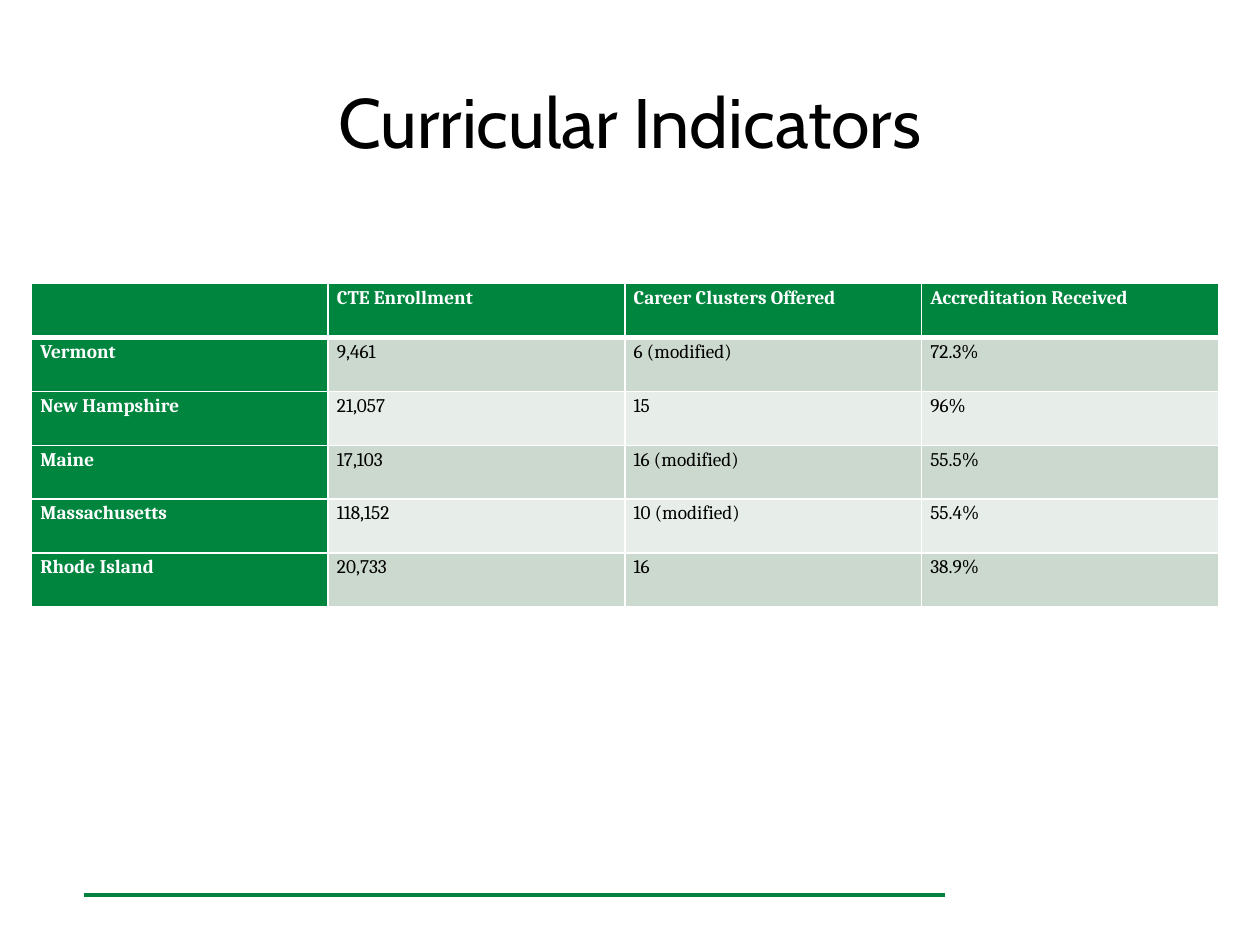
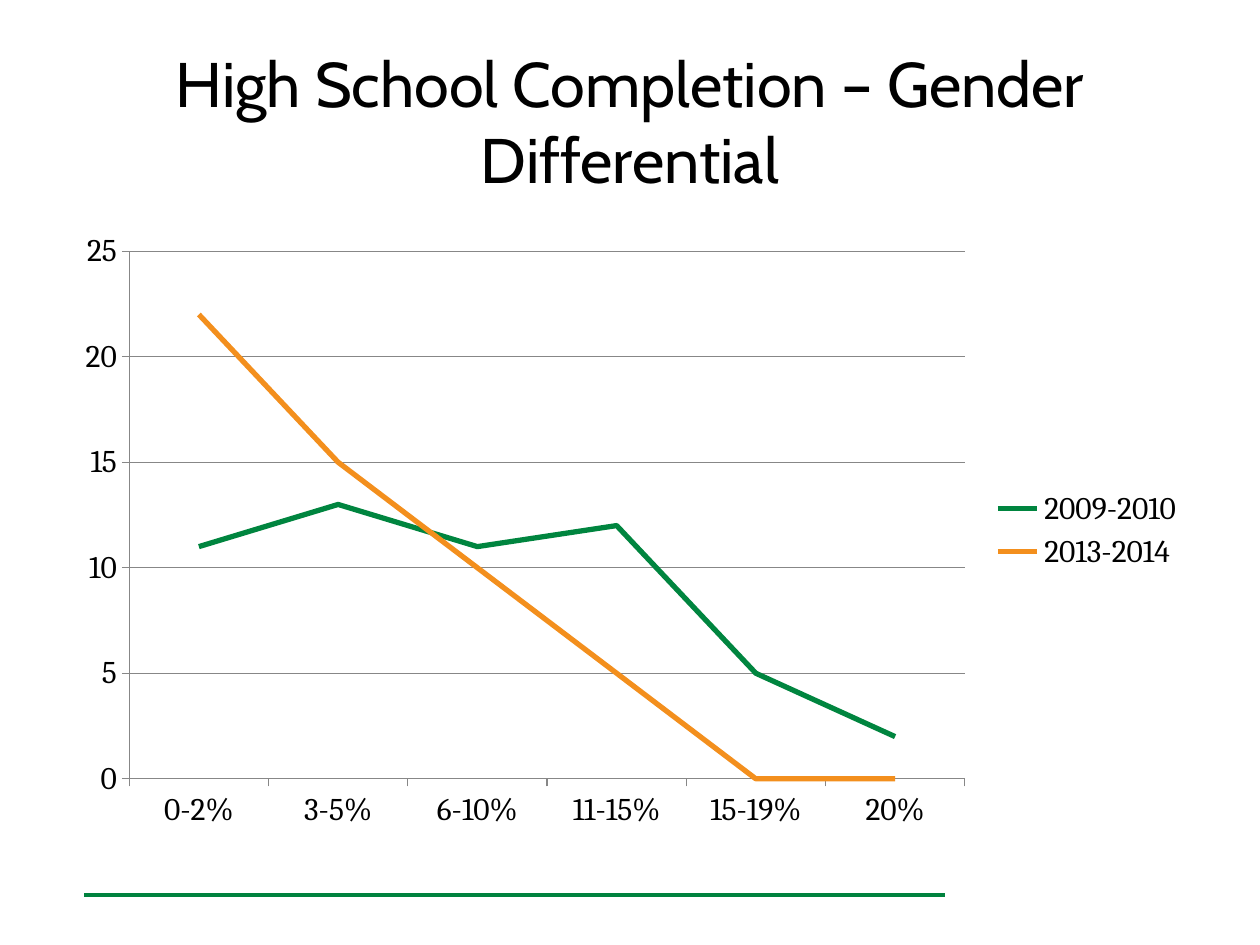
from lxml import etree
from pptx import Presentation
from pptx.chart.data import CategoryChartData
from pptx.dml.color import RGBColor
from pptx.enum import chart as ch, shapes, text
from pptx.oxml.ns import qn
from pptx.util import Inches, Pt

GREEN = RGBColor(0x00, 0x85, 0x3F)
RULE_GREEN = RGBColor(0x00, 0x82, 0x3E)
ORANGE = RGBColor(0xF3, 0x8F, 0x1D)
BAND_DARK = RGBColor(0xCC, 0xD9, 0xCF)
BAND_LIGHT = RGBColor(0xE7, 0xED, 0xE8)
GRAY = RGBColor(0x87, 0x87, 0x87)
WHITE = RGBColor(0xFF, 0xFF, 0xFF)
BLACK = RGBColor(0x00, 0x00, 0x00)
TITLE_FONT = "Cabin"
BODY_FONT = "Cambria"

INDICATORS = [
    ("", "CTE Enrollment", "Career Clusters Offered", "Accreditation Received"),
    ("Vermont", "9,461", "6 (modified)", "72.3%"),
    ("New Hampshire", "21,057", "15", "96%"),
    ("Maine", "17,103", "16 (modified)", "55.5%"),
    ("Massachusetts", "118,152", "10 (modified)", "55.4%"),
    ("Rhode Island", "20,733", "16", "38.9%"),
]
GAP_BANDS = ["0-2%", "3-5%", "6-10%", "11-15%", "15-19%", "20%"]
COMPLETION = [
    ("2009-2010", (11, 13, 11, 12, 5, 2), GREEN),
    ("2013-2014", (22, 15, 10, 5, 0, 0), ORANGE),
]


def set_text(tf, content, font=BODY_FONT, size=11, color=BLACK, bold=False,
             align=text.PP_ALIGN.LEFT, spacing=None):
    p = tf.paragraphs[0]
    p.alignment = align
    p.line_spacing = spacing
    p.font.size = Pt(size)
    if content:
        r = p.add_run()
        r.text = content
        r.font.name = font
        r.font.size = Pt(size)
        r.font.bold = bold
        r.font.color.rgb = color


def set_borders(cell, **widths):
    tcPr = cell._tc.get_or_add_tcPr()
    for side in "LRTB":
        ln = etree.SubElement(tcPr, qn(f"a:ln{side}"), w=str(Pt(widths.get(side, 1))))
        fill = etree.SubElement(ln, qn("a:solidFill"))
        etree.SubElement(fill, qn("a:srgbClr"), val=str(WHITE))


def add_footer_rule(slide):
    y = Inches(7.1)
    rule = slide.shapes.add_connector(
        shapes.MSO_CONNECTOR.STRAIGHT, Inches(0.67), y, Inches(7.5), y)
    rule.line.color.rgb = RULE_GREEN
    rule.line.width = Pt(2.25)
    etree.SubElement(rule._element.spPr, qn("a:effectLst"))


def add_titled_slide(prs, title, size):
    slide = prs.slides.add_slide(prs.slide_layouts[5])
    add_footer_rule(slide)
    sp = slide.shapes.title
    sp.left, sp.top, sp.width, sp.height = map(Inches, (0.5, 0.33, 9, 1.25))
    tf = sp.text_frame
    tf.word_wrap = True
    tf.auto_size = text.MSO_AUTO_SIZE.NONE
    tf.vertical_anchor = text.MSO_ANCHOR.MIDDLE
    set_text(tf, title, font=TITLE_FONT, size=size, align=text.PP_ALIGN.CENTER)
    return slide


def add_indicator_table(slide, rows, left, top, width, height):
    frame = slide.shapes.add_table(
        len(rows), len(rows[0]), Inches(left), Inches(top), Inches(width), Inches(height))
    table = frame.table
    table.first_col = True
    for i, row in enumerate(rows):
        for j, value in enumerate(row):
            cell = table.cell(i, j)
            heading = i == 0 or j == 0
            set_borders(cell, T=3 if i == 1 else 1, B=3 if i == 0 else 1)
            cell.fill.solid()
            cell.fill.fore_color.rgb = (
                GREEN if heading else BAND_DARK if i % 2 else BAND_LIGHT)
            cell.margin_left = cell.margin_right = Inches(0.07)
            cell.margin_top = cell.margin_bottom = 0
            set_text(cell.text_frame, value, color=WHITE if heading else BLACK,
                     bold=heading, spacing=1.15)


def style_line(line, color, width):
    line.color.rgb = color
    line.width = Pt(width)


def add_completion_chart(slide, left, top, width, height):
    data = CategoryChartData()
    data.categories = GAP_BANDS
    for name, values, _ in COMPLETION:
        data.add_series(name, values)
    chart = slide.shapes.add_chart(
        ch.XL_CHART_TYPE.LINE, Inches(left), Inches(top),
        Inches(width), Inches(height), data).chart
    chart.has_title = False
    chart.font.name = BODY_FONT
    chart.font.size = Pt(18)
    chart.font.color.rgb = BLACK
    chart.has_legend = True
    chart.legend.position = ch.XL_LEGEND_POSITION.RIGHT
    chart.legend.include_in_layout = False
    plot = chart.plots[0]
    plot.vary_by_categories = False
    for series, (_, _, color) in zip(plot.series, COMPLETION):
        series.smooth = False
        series.marker.style = ch.XL_MARKER_STYLE.NONE
        style_line(series.format.line, color, 3)
    for axis in (chart.category_axis, chart.value_axis):
        axis.major_tick_mark = ch.XL_TICK_MARK.OUTSIDE
        axis.minor_tick_mark = ch.XL_TICK_MARK.NONE
        style_line(axis.format.line, GRAY, 0.75)
    scale = chart.value_axis
    scale.minimum_scale, scale.maximum_scale, scale.major_unit = 0, 25, 5
    scale.has_major_gridlines = True
    style_line(scale.major_gridlines.format.line, GRAY, 0.75)


def main():
    prs = Presentation()
    prs.slide_width, prs.slide_height = Inches(10), Inches(7.5)
    slide = add_titled_slide(prs, "Curricular Indicators", 40)
    add_indicator_table(slide, INDICATORS, 0.25, 2.25, 9.42, 2.57)
    slide = add_titled_slide(prs, "High School Completion – Gender Differential", 36)
    add_completion_chart(slide, 0.5, 1.75, 9, 4.92)
    prs.save("out.pptx")


if __name__ == "__main__":
    main()
